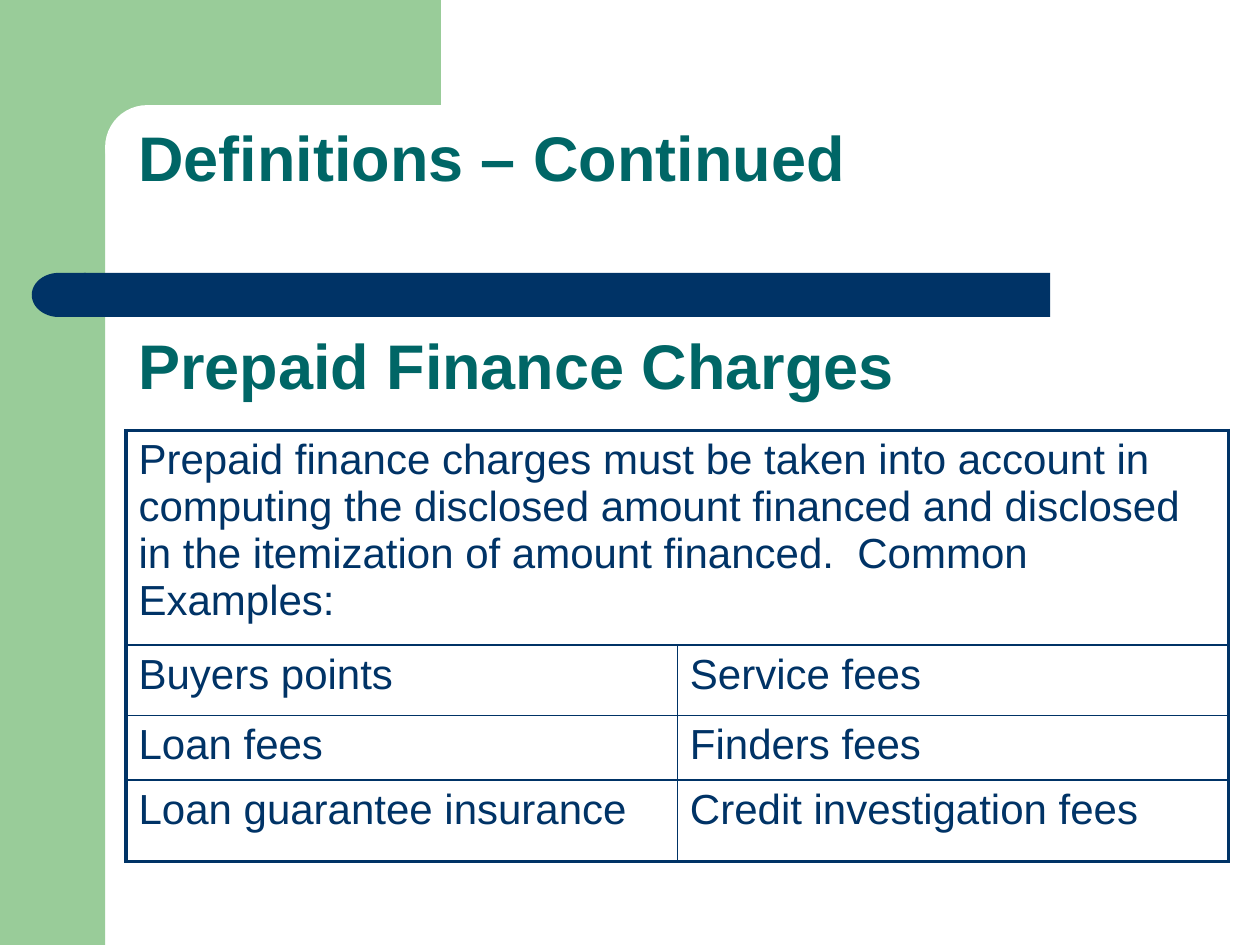
import pptx
import pptx.util
import pptx.dml.color
import pptx.oxml
import pptx.oxml.ns
import pptx.enum.shapes
import pptx.enum.text

Cm = pptx.util.Cm
Pt = pptx.util.Pt
RGBColor = pptx.dml.color.RGBColor
Shape = pptx.enum.shapes.MSO_SHAPE

GREEN = RGBColor(0x99, 0xCC, 0x99)
WHITE = RGBColor(0xFF, 0xFF, 0xFF)
NAVY = RGBColor(0x00, 0x33, 0x66)
TEAL = RGBColor(0x00, 0x66, 0x66)

HEADINGS = ["Definitions – Continued", "Prepaid Finance Charges"]
HEADING_GAP = Pt(80)
INTRO = ("Prepaid finance charges must be taken into account in computing the "
         "disclosed amount financed and disclosed in the itemization of amount "
         "financed.  Common Examples:")
ROWS = [
    (INTRO, ""),
    ("Buyers points", "Service fees"),
    ("Loan fees", "Finders fees"),
    ("Loan guarantee insurance", "Credit investigation fees"),
]
ROW_HEIGHTS = [4.06, 1.42, 1.3, 1.65]
OUTER_LINE, INNER_LINE = Pt(2.25), Pt(1)

# preset, (left, top, width, height) in cm, colour, rotation, corner
DECORATION = [
    (Shape.RECTANGLE, (0, 0, 2.12, 19.05), GREEN, 0, None),
    (Shape.RECTANGLE, (1.9, 0, 6.99, 2.96), GREEN, 0, None),
    (Shape.ROUNDED_RECTANGLE, (2.12, 2.12, 14.18, 1.69), WHITE, 0, 0.5),
    (Shape.RECTANGLE, (1.69, 5.5, 19.48, 0.89), NAVY, 0, None),
    (Shape.FLOWCHART_DELAY, (0.64, 5.5, 1.09, 0.89), NAVY, 180, None),
]
TITLE_AREA = (2.54, 2.12, 22.23, 6.14)
TABLE_AREA = (2.54, 8.68, 22.23, sum(ROW_HEIGHTS))


def lengths(area):
    return [Cm(value) for value in area]


def write(para, text, size, color, bold=False):
    span = para.add_run()
    span.text = text
    for name, value in {"name": "Arial", "size": Pt(size), "bold": bold}.items():
        setattr(span.font, name, value)
    span.font.color.rgb = color


def add_decoration(page):
    for preset, area, color, rotation, corner in DECORATION:
        shape = page.shapes.add_shape(preset, *lengths(area))
        shape.shadow.inherit = False
        shape.fill.solid()
        shape.fill.fore_color.rgb = color
        shape.line.fill.background()
        shape.rotation = rotation
        if corner is not None:
            shape.adjustments[0] = corner


def add_title(page):
    frame = page.shapes.add_textbox(*lengths(TITLE_AREA)).text_frame
    frame.word_wrap = True
    frame.vertical_anchor = pptx.enum.text.MSO_ANCHOR.BOTTOM
    for index, heading in enumerate(HEADINGS):
        para = frame.add_paragraph() if index else frame.paragraphs[0]
        para.line_spacing = 0.9
        para.space_before = HEADING_GAP if index else Pt(0)
        write(para, heading, 36, TEAL, bold=True)


def set_borders(cell, widths):
    """Draw the cell's borders; widths maps L, R, T, B, in that order."""
    properties = cell._tc.get_or_add_tcPr()
    for side, width in widths.items():
        properties.append(pptx.oxml.parse_xml(
            f'<a:ln{side} {pptx.oxml.ns.nsdecls("a")} w="{int(width)}">'
            f'<a:solidFill><a:srgbClr val="{NAVY}"/></a:solidFill></a:ln{side}>'))


def add_charges_table(page):
    columns = len(ROWS[0])
    table = page.shapes.add_table(len(ROWS), columns, *lengths(TABLE_AREA)).table
    table.first_row = table.horz_banding = False
    for row, height in zip(table.rows, ROW_HEIGHTS):
        row.height = Cm(height)
    table.cell(0, 0).merge(table.cell(0, columns - 1))
    for r, texts in enumerate(ROWS):
        for c, text in enumerate(texts):
            cell = table.cell(r, c)
            on_edge = {
                "L": c == 0,
                "R": c == columns - 1 or cell.is_merge_origin,
                "T": r == 0,
                "B": r == len(ROWS) - 1,
            }
            set_borders(cell, {side: OUTER_LINE if edge else INNER_LINE
                               for side, edge in on_edge.items()})
            cell.fill.background()
            if text:
                write(cell.text_frame.paragraphs[0], text, 24, NAVY)


def main():
    deck = pptx.Presentation()
    deck.slide_width, deck.slide_height = Cm(25.4), Cm(19.05)
    page = deck.slides.add_slide(deck.slide_layouts[6])
    add_decoration(page)
    add_title(page)
    add_charges_table(page)
    deck.save("out.pptx")


if __name__ == "__main__":
    main()
